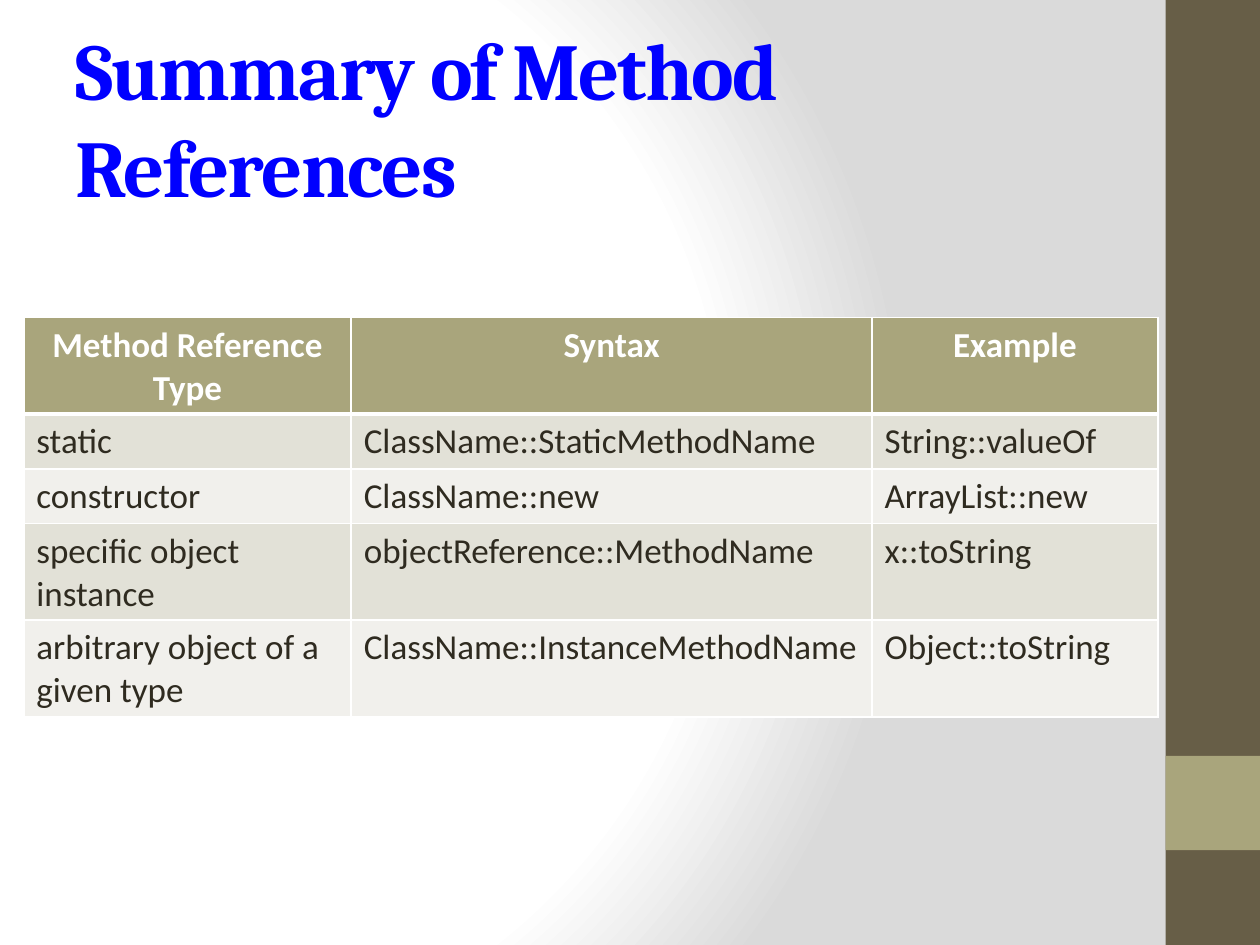
from lxml.etree import SubElement as Sub
from pptx import Presentation
from pptx.dml.color import RGBColor
from pptx.enum.shapes import MSO_SHAPE as Shape
from pptx.enum.text import MSO_ANCHOR as Anchor, PP_ALIGN as Align
from pptx.oxml.ns import qn
from pptx.util import Cm, Pt

# Content
TITLE = "Summary of Method References"
ROWS = [
    ("Method Reference Type", "Syntax", "Example"),
    ("static", "ClassName::StaticMethodName", "String::valueOf"),
    ("constructor", "ClassName::new", "ArrayList::new"),
    ("specific object instance", "objectReference::MethodName", "x::toString"),
    ("arbitrary object of a given type", "ClassName::InstanceMethodName",
     "Object::toString"),
]
WIDTHS = 6.6, 10.5, 5.76
TALL = 1.04

# Colours
BROWN, OLIVE, WHITE, INK, BLUE = "675E47", "A9A57C", "FFFFFF", "2F2B20", "0000FF"
BANDS = "E2E1D7", "F1F0EC"
STOPS = (0, WHITE), (75, WHITE), (100, "DADADA")
FOCUS = {"l": 20, "t": 50, "r": 100, "b": 50}


def paint(color, code):
    color.rgb = RGBColor.from_string(code)


def fill(part, code):
    part.fill.solid()
    paint(part.fill.fore_color, code)


def style(font, name, size, code, bold):
    font.name, font.size, font.bold = name, Pt(size), bold
    paint(font.color, code)


def glow(slide):
    """Give the background a round gradient."""
    slide.background.fill.gradient()
    grad = next(slide.element.iter(qn("a:gradFill")))
    for child in list(grad):
        grad.remove(child)
    stops = Sub(grad, qn("a:gsLst"))
    for pos, code in STOPS:
        stop = Sub(stops, qn("a:gs"), pos=str(pos * 1000))
        Sub(stop, qn("a:srgbClr"), val=code)
    ring = Sub(grad, qn("a:path"), path="circle")
    Sub(ring, qn("a:fillToRect"),
        {side: str(part * 1000) for side, part in FOCUS.items()})


def block(slide, top, high, code):
    box = slide.shapes.add_shape(
        Shape.RECTANGLE, Cm(23.5), Cm(top), Cm(1.9), Cm(high))
    box.shadow.inherit = False
    fill(box, code)
    box.line.fill.background()


def edge(cell, widths):
    """Draw white borders; they must stand before the cell's fill."""
    props = cell._tc.get_or_add_tcPr()
    for at, (side, width) in enumerate(zip("LRTB", widths)):
        line = Sub(props, qn("a:ln" + side), w=str(Pt(width)))
        Sub(Sub(line, qn("a:solidFill")), qn("a:srgbClr"), val=WHITE)
        props.insert(at, line)


def main():
    deck = Presentation()
    deck.slide_width, deck.slide_height = Cm(25.4), Cm(19.05)
    slide = deck.slides.add_slide(deck.slide_layouts[6])

    # Background and side bar
    glow(slide)
    block(slide, 0, 19.05, BROWN)
    block(slide, 15.24, 1.9, OLIVE)

    # Title
    frame = slide.shapes.add_textbox(
        Cm(1.27), Cm(0.76), Cm(21.16), Cm(3.18)).text_frame
    frame.word_wrap = True
    frame.vertical_anchor = Anchor.MIDDLE
    para = frame.paragraphs[0]
    run = para.add_run()
    run.text = TITLE
    style(para.font, "Cambria", 46, BLUE, True)
    run.font._element.set("spc", "-100")

    # Table
    table = slide.shapes.add_table(
        len(ROWS), len(WIDTHS), Cm(0.48), Cm(6.4),
        Cm(sum(WIDTHS)), Cm(TALL * len(ROWS))).table
    for col, width in zip(table.columns, WIDTHS):
        col.width = Cm(width)
    for r, row in enumerate(ROWS):
        head = r == 0
        for c, text in enumerate(row):
            cell = table.cell(r, c)
            cell.text = text
            para = cell.text_frame.paragraphs[0]
            para.alignment = Align.CENTER if head else Align.LEFT
            style(para.font, "Calibri", 20, WHITE if head else INK, head)
            fill(cell, OLIVE if head else BANDS[(r - 1) % 2])
            edge(cell, (1, 1, 3 if r == 1 else 1, 3 if head else 1))

    deck.save("out.pptx")


if __name__ == "__main__":
    main()
